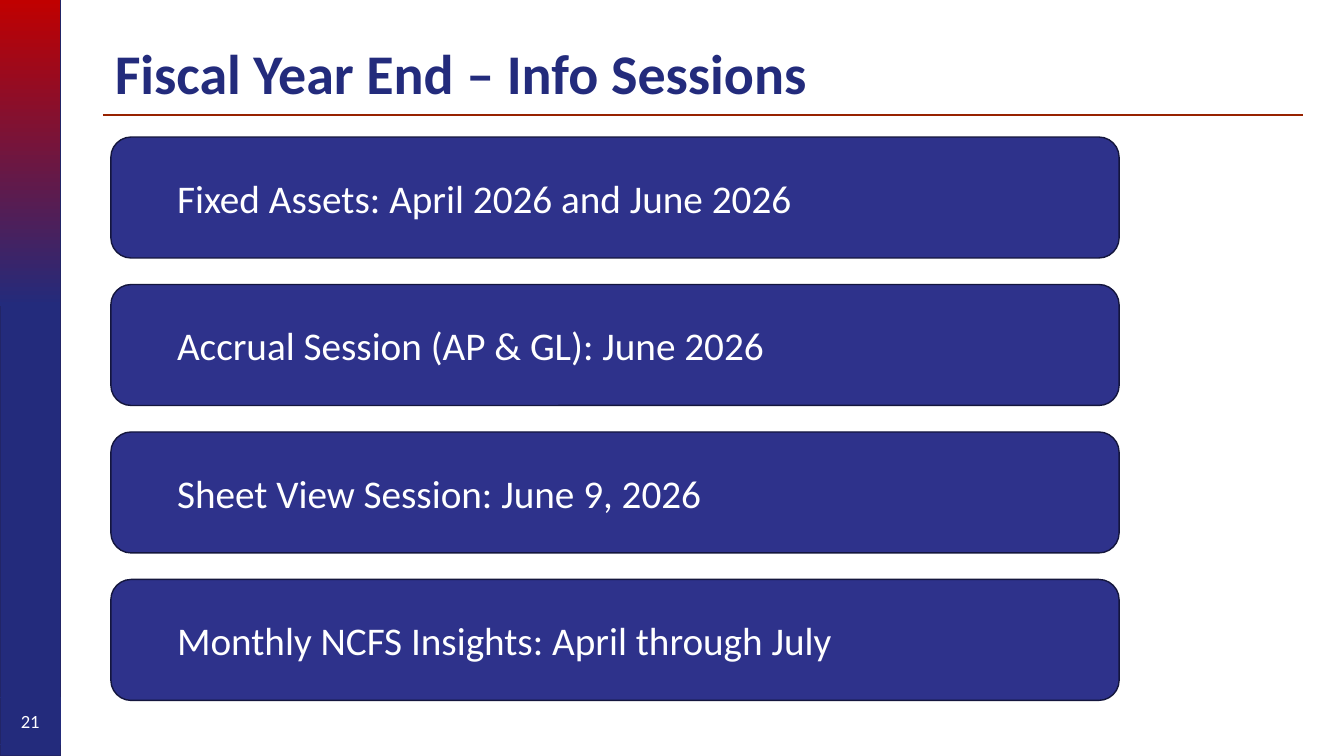
from pptx import Presentation
from pptx.dml.color import RGBColor
from pptx.enum.shapes import MSO_CONNECTOR, MSO_SHAPE
from pptx.enum.text import MSO_ANCHOR, PP_ALIGN
from pptx.oxml.ns import qn
from pptx.util import Inches, Pt

NAVY = "232B7C"
RED = "C00000"
WHITE = "FFFFFF"


def color(value):
    return RGBColor.from_string(value)


class SlideBuilder:
    """Draws styled elements on the current slide."""

    font = "Calibri"

    def __init__(self, slide):
        self.slide = slide

    def shape(self, kind, left, top, width, height, fill, line, line_width=1):
        box = self.slide.shapes.add_shape(
            kind, Inches(left), Inches(top), Inches(width), Inches(height))
        box.shadow.inherit = False
        if fill:
            box.fill.solid()
            box.fill.fore_color.rgb = color(fill)
        else:
            box.fill.background()
        if line:
            box.line.color.rgb = color(line)
            box.line.width = Pt(line_width)
        else:
            box.line.fill.background()
        return box

    def gradient(self, left, top, width, height, colors):
        box = self.shape(MSO_SHAPE.RECTANGLE, left, top, width, height, None, None)
        box.fill.gradient()
        box.fill.gradient_angle = 270
        for stop, value in zip(box.fill.gradient_stops, colors):
            stop.color.rgb = color(value)

    def rule(self, left, right, top, line, width):
        connector = self.slide.shapes.add_connector(
            MSO_CONNECTOR.STRAIGHT, Inches(left), Inches(top), Inches(right), Inches(top))
        connector.line.color.rgb = color(line)
        connector.line.width = Pt(width)
        properties = connector._element.spPr
        properties.append(properties.makeelement(qn("a:effectLst"), {}))

    def text(self, box, wording, size, fill, bold=False, align=PP_ALIGN.LEFT, indent=0):
        frame = box.text_frame
        frame.word_wrap = True
        frame.vertical_anchor = MSO_ANCHOR.MIDDLE
        para = frame.paragraphs[0]
        para.text = wording
        para.alignment = align
        if indent:
            para._p.get_or_add_pPr().set("marL", str(Inches(indent)))
        para.font.name = self.font
        para.font.size = Pt(size)
        para.font.bold = bold
        para.font.color.rgb = color(fill)
        return para

    def title(self, wording):
        box = self.slide.shapes.add_textbox(
            Inches(1.04), Inches(0.41), Inches(12), Inches(0.69))
        para = self.text(box, wording, 40, NAVY, bold=True)
        para.line_spacing = 0.9

    def session(self, top, wording):
        box = self.shape(MSO_SHAPE.ROUNDED_RECTANGLE, 1.1, top, 10, 1.2, "2E328B", "14163D")
        self.text(box, wording, 28, WHITE, indent=0.5)

    def page_number(self, number):
        box = self.shape(MSO_SHAPE.RECTANGLE, 0, 6.92, 0.6, 0.47, None, NAVY, 0.75)
        self.text(box, number, 13.3, WHITE, align=PP_ALIGN.CENTER)


def main():
    deck = Presentation()
    deck.slide_width = Inches(13.33)
    deck.slide_height = Inches(7.5)
    page = SlideBuilder(deck.slides.add_slide(deck.slide_layouts[6]))

    page.shape(MSO_SHAPE.RECTANGLE, 0, 0, 0.6, 7.5, NAVY, "222567")
    page.gradient(0, 0, 0.6, 3.04, (RED, NAVY))
    page.rule(1.02, 12.92, 1.14, "972200", 1.5)
    page.title("Fiscal Year End – Info Sessions")

    sessions = (
        "Fixed Assets: April 2026 and June 2026",
        "Accrual Session (AP & GL): June 2026",
        "Sheet View Session: June 9, 2026",
        "Monthly NCFS Insights: April through July",
    )
    for index, wording in enumerate(sessions):
        page.session(1.36 + 1.463 * index, wording)

    page.page_number("21")
    deck.save("out.pptx")


if __name__ == "__main__":
    main()
